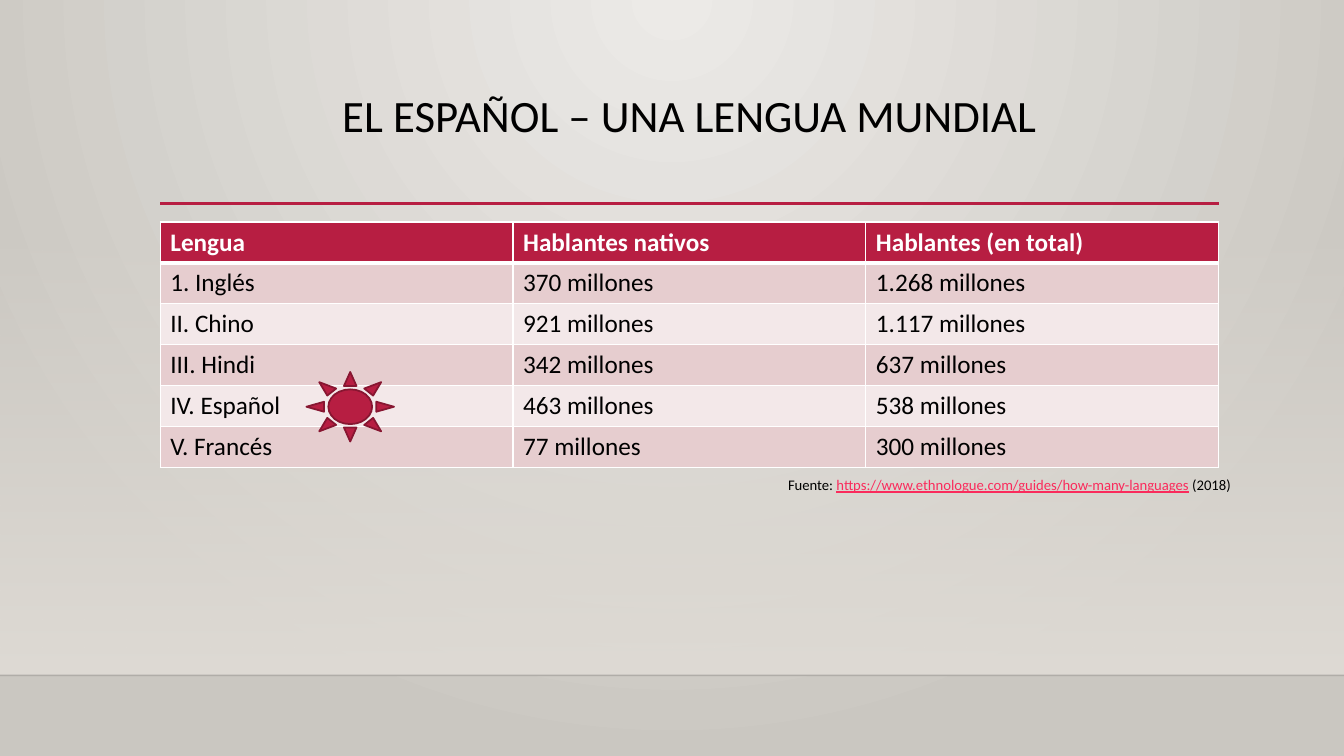
from lxml.etree import SubElement
from pptx import Presentation
from pptx.dml.color import RGBColor
from pptx.enum.shapes import MSO_CONNECTOR, MSO_SHAPE
from pptx.enum.text import MSO_ANCHOR, MSO_AUTO_SIZE, PP_ALIGN
from pptx.oxml.ns import qn
from pptx.util import Pt

BLACK = RGBColor(0x00, 0x00, 0x00)
WHITE = RGBColor(0xFF, 0xFF, 0xFF)
CRIMSON = RGBColor(0xB7, 0x1E, 0x42)
DARK_CRIMSON = RGBColor(0x87, 0x16, 0x31)
LINK_PINK = RGBColor(0xFA, 0x2B, 0x5C)
ROSE = RGBColor(0xE6, 0xCD, 0xCF)
PALE_ROSE = RGBColor(0xF3, 0xE8, 0xE9)
SAND_LIGHT = RGBColor(0xEC, 0xEA, 0xE7)
SAND_DARK = RGBColor(0xCA, 0xC7, 0xC1)
SAND = RGBColor(0xDF, 0xDB, 0xD5)

FONT = "Calibri"
PAGE_WIDTH, PAGE_HEIGHT = 960, 540
LEFT, CONTENT_WIDTH = 114.5, 756
FLOOR_TOP = 482.4
ROW_HEIGHT = 29.16

ROWS = [
    ("Lengua", "Hablantes nativos", "Hablantes (en total)"),
    ("1. Inglés", "370 millones", "1.268 millones"),
    ("II. Chino", "921 millones", "1.117 millones"),
    ("III. Hindi", "342 millones", "637 millones"),
    ("IV. Español", "463 millones", "538 millones"),
    ("V. Francés", "77 millones", "300 millones"),
]


def set_font(font, size, color, bold=False):
    font.name = FONT
    font.size = Pt(size)
    font.bold = bold
    font.color.rgb = color


def set_alpha(color_element, percent):
    SubElement(color_element, qn("a:alpha"), val=str(percent * 1000))


def set_gradient(fill, first, last):
    """Apply a two-stop gradient and return its XML element."""
    fill.gradient()
    for stop, color, position in zip(fill.gradient_stops, (first, last), (0, 1)):
        stop.color.rgb = color
        stop.position = position
    return fill._fill._gradFill


def paint_background(page):
    gradient = set_gradient(page.background.fill, SAND_LIGHT, SAND_DARK)
    gradient.remove(gradient.find(qn("a:lin")))
    circle = SubElement(gradient, qn("a:path"), path="circle")
    SubElement(circle, qn("a:fillToRect"), l="43000", t="0", r="43000", b="100000")


def add_wall(page):
    """Add the panel that fades in from transparent above the floor."""
    top = 159.1
    wall = page.shapes.add_shape(
        MSO_SHAPE.RECTANGLE, 0, Pt(top), Pt(PAGE_WIDTH), Pt(FLOOR_TOP - top))
    wall.shadow.inherit = False
    wall.line.fill.background()
    gradient = set_gradient(wall.fill, SAND, SAND)
    wall.fill.gradient_angle = 270
    set_alpha(next(gradient.iter(qn("a:srgbClr"))), 0)


def add_rule(page, left, right, y, color, width):
    rule = page.shapes.add_connector(
        MSO_CONNECTOR.STRAIGHT, Pt(left), Pt(y), Pt(right), Pt(y))
    rule.line.color.rgb = color
    rule.line.width = Pt(width)
    SubElement(rule._element.spPr, qn("a:effectLst"))
    return rule


def set_title(page, text):
    title = page.shapes.title
    title.left, title.top = Pt(LEFT), Pt(63.4)
    title.width, title.height = Pt(CONTENT_WIDTH), Pt(82.6)
    frame = title.text_frame
    frame.text = text
    frame.vertical_anchor = MSO_ANCHOR.TOP
    frame.auto_size = MSO_AUTO_SIZE.NONE
    para = frame.paragraphs[0]
    para.alignment = PP_ALIGN.CENTER
    para.line_spacing = 0.9
    set_font(para.font, 32, BLACK)


def set_borders(cell, top, bottom):
    properties = cell._tc.get_or_add_tcPr()
    for side, width in (("L", 1), ("R", 1), ("T", top), ("B", bottom)):
        border = SubElement(properties, qn(f"a:ln{side}"), w=str(Pt(width)))
        fill = SubElement(border, qn("a:solidFill"))
        SubElement(fill, qn("a:srgbClr"), val=str(WHITE))


def add_language_table(page):
    columns = len(ROWS[0])
    table = page.shapes.add_table(
        len(ROWS), columns, Pt(LEFT), Pt(158.6),
        Pt(CONTENT_WIDTH), Pt(ROW_HEIGHT * len(ROWS))).table
    for column in table.columns:
        column.width = Pt(CONTENT_WIDTH / columns)
    for index, texts in enumerate(ROWS):
        header = index == 0
        table.rows[index].height = Pt(ROW_HEIGHT)
        for cell, text in zip(table.rows[index].cells, texts):
            cell.text = text
            set_font(cell.text_frame.paragraphs[0].font, 18,
                     WHITE if header else BLACK, header)
            set_borders(cell, 3 if index == 1 else 1, 3 if header else 1)
            cell.fill.solid()
            band = ROSE if index % 2 else PALE_ROSE
            cell.fill.fore_color.rgb = CRIMSON if header else band


def add_sun(page):
    sun = page.shapes.add_shape(
        MSO_SHAPE.SUN, Pt(218.9), Pt(265.7), Pt(62.6), Pt(49.7))
    sun.shadow.inherit = False
    sun.fill.solid()
    sun.fill.fore_color.rgb = CRIMSON
    sun.line.color.rgb = DARK_CRIMSON
    sun.line.width = Pt(1.25)


def add_source(page):
    box = page.shapes.add_textbox(Pt(555.8), Pt(336.2), Pt(387.4), Pt(20.9))
    frame = box.text_frame
    frame.word_wrap = True
    frame.auto_size = MSO_AUTO_SIZE.SHAPE_TO_FIT_TEXT
    para = frame.paragraphs[0]
    address = "https://www.ethnologue.com/guides/how-many-languages"
    for text in ("Fuente: ", address, " (2018)"):
        span = para.add_run()
        span.text = text
        is_address = text == address
        set_font(span.font, 10.5, LINK_PINK if is_address else BLACK)
        span.font.underline = is_address


def main():
    deck = Presentation()
    deck.slide_width, deck.slide_height = Pt(PAGE_WIDTH), Pt(PAGE_HEIGHT)
    page = deck.slides.add_slide(deck.slide_layouts.get_by_name("Title Only"))
    paint_background(page)
    add_wall(page)
    floor_edge = add_rule(page, 0, PAGE_WIDTH, FLOOR_TOP, BLACK, 1)
    set_alpha(next(floor_edge.line._ln.iter(qn("a:srgbClr"))), 20)
    add_rule(page, LEFT, LEFT + CONTENT_WIDTH, 145.4, CRIMSON, 2.5)
    set_title(page, "EL ESPAÑOL – UNA LENGUA MUNDIAL")
    add_language_table(page)
    add_sun(page)
    add_source(page)
    deck.save("out.pptx")


if __name__ == "__main__":
    main()
